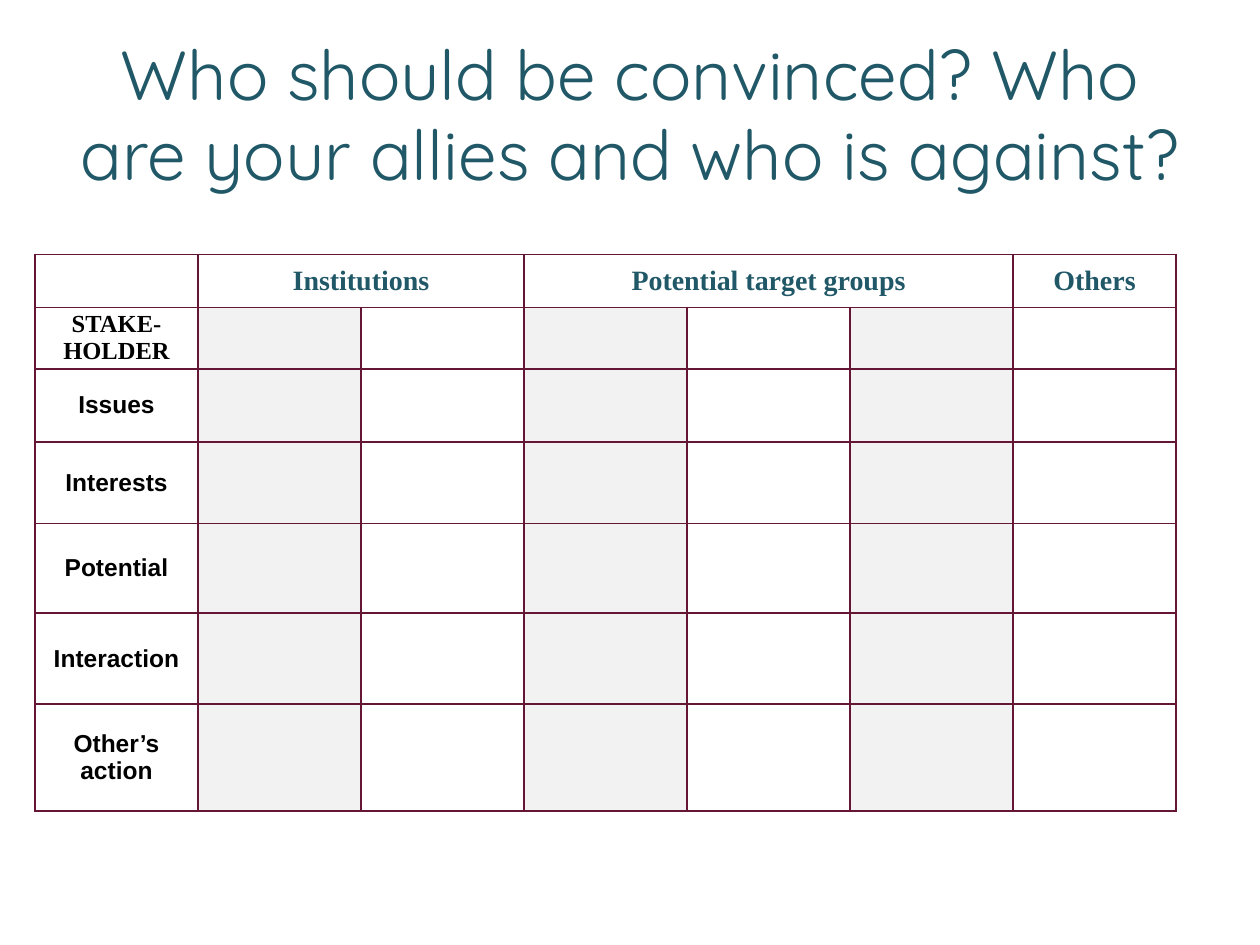
import pptx
import pptx.dml.color
import pptx.enum.text
import pptx.oxml.ns
import pptx.util
from lxml import etree

Pt = pptx.util.Pt
CENTER = pptx.enum.text.PP_ALIGN.CENTER
MIDDLE = pptx.enum.text.MSO_ANCHOR.MIDDLE

TEAL, BLACK, GREY, WINE = "205867", "000000", "F2F2F2", "651635"
SERIF, SANS = "Times New Roman", "Arial"

COLUMNS = 7
COLUMN_WIDTH = 93.15
ROW_HEIGHTS = [30.4, 35.1, 41.8, 46.6, 51.3, 52, 61]
GROUPS = [("Institutions", 1, 2), ("Potential target groups", 3, 5), ("Others", 6, 6)]
ROW_LABELS = ["STAKE-HOLDER", "Issues", "Interests", "Potential", "Interaction",
              "Other’s action"]
SHADED_COLUMNS = (1, 3, 5)


def color(value):
    return pptx.dml.color.RGBColor.from_string(value)


def write(tf, text, size, font, fill, bold=False, spacing=None):
    tf.word_wrap = True
    p = tf.paragraphs[0]
    p.alignment = CENTER
    if spacing:
        p.line_spacing = spacing
    r = p.add_run()
    r.text = text
    r.font.size = Pt(size)
    r.font.name = font
    r.font.bold = bold
    r.font.color.rgb = color(fill)


class Deck:
    """Holds the border style and the current slide."""

    def __init__(self, prs, border, border_width):
        self.border = border
        self.border_width = border_width
        self.s = prs.slides.add_slide(prs.slide_layouts[5])

    def title(self, text, left, top, width, height):
        sp = self.s.shapes.title
        sp.left, sp.top, sp.width, sp.height = Pt(left), Pt(top), Pt(width), Pt(height)
        tf = sp.text_frame
        tf.auto_size = pptx.enum.text.MSO_AUTO_SIZE.NONE
        tf.vertical_anchor = MIDDLE
        write(tf, text, size=39.6, font="Quicksand", fill=TEAL, spacing=0.96)

    def table(self, left, top, columns, column_width, row_heights):
        """Add a plain bordered table without banding."""
        frame = self.s.shapes.add_table(
            len(row_heights), columns, Pt(left), Pt(top),
            Pt(columns * column_width), Pt(sum(row_heights)))
        table = frame.table
        table.first_row = table.horz_banding = False
        for column in table.columns:
            column.width = Pt(column_width)
        for row, height in zip(table.rows, row_heights):
            row.height = Pt(height)
        for cell in table.iter_cells():
            self.outline(cell)
            cell.fill.background()
        return table

    def outline(self, cell):
        qn = pptx.oxml.ns.qn
        tc_pr = cell._tc.get_or_add_tcPr()
        for side in ("a:lnL", "a:lnR", "a:lnT", "a:lnB"):
            ln = etree.SubElement(tc_pr, qn(side), w=str(Pt(self.border_width)))
            solid = etree.SubElement(ln, qn("a:solidFill"))
            etree.SubElement(solid, qn("a:srgbClr"), val=self.border)

    def label(self, cell, text, **style):
        cell.vertical_anchor = MIDDLE
        cell.margin_left = cell.margin_right = Pt(3.6)
        cell.margin_top = cell.margin_bottom = 0
        write(cell.text_frame, text, bold=True, **style)


def main():
    prs = pptx.Presentation()
    prs.slide_width, prs.slide_height = Pt(720), Pt(540)
    deck = Deck(prs, border=WINE, border_width=1)
    deck.title("Who should be convinced? Who are your allies and who is against?",
               36, 21.6, 648, 90)

    table = deck.table(20, 145.3, COLUMNS, COLUMN_WIDTH, ROW_HEIGHTS)
    for text, first, last in GROUPS:
        cell = table.cell(0, first)
        if last > first:
            cell.merge(table.cell(0, last))
        deck.label(cell, text, size=16, font=SERIF, fill=TEAL)
    for row, text in enumerate(ROW_LABELS, start=1):
        font = SERIF if row == 1 else SANS
        deck.label(table.cell(row, 0), text, size=14, font=font, fill=BLACK)
        for column in SHADED_COLUMNS:
            fill = table.cell(row, column).fill
            fill.solid()
            fill.fore_color.rgb = color(GREY)

    prs.save("out.pptx")


if __name__ == "__main__":
    main()
